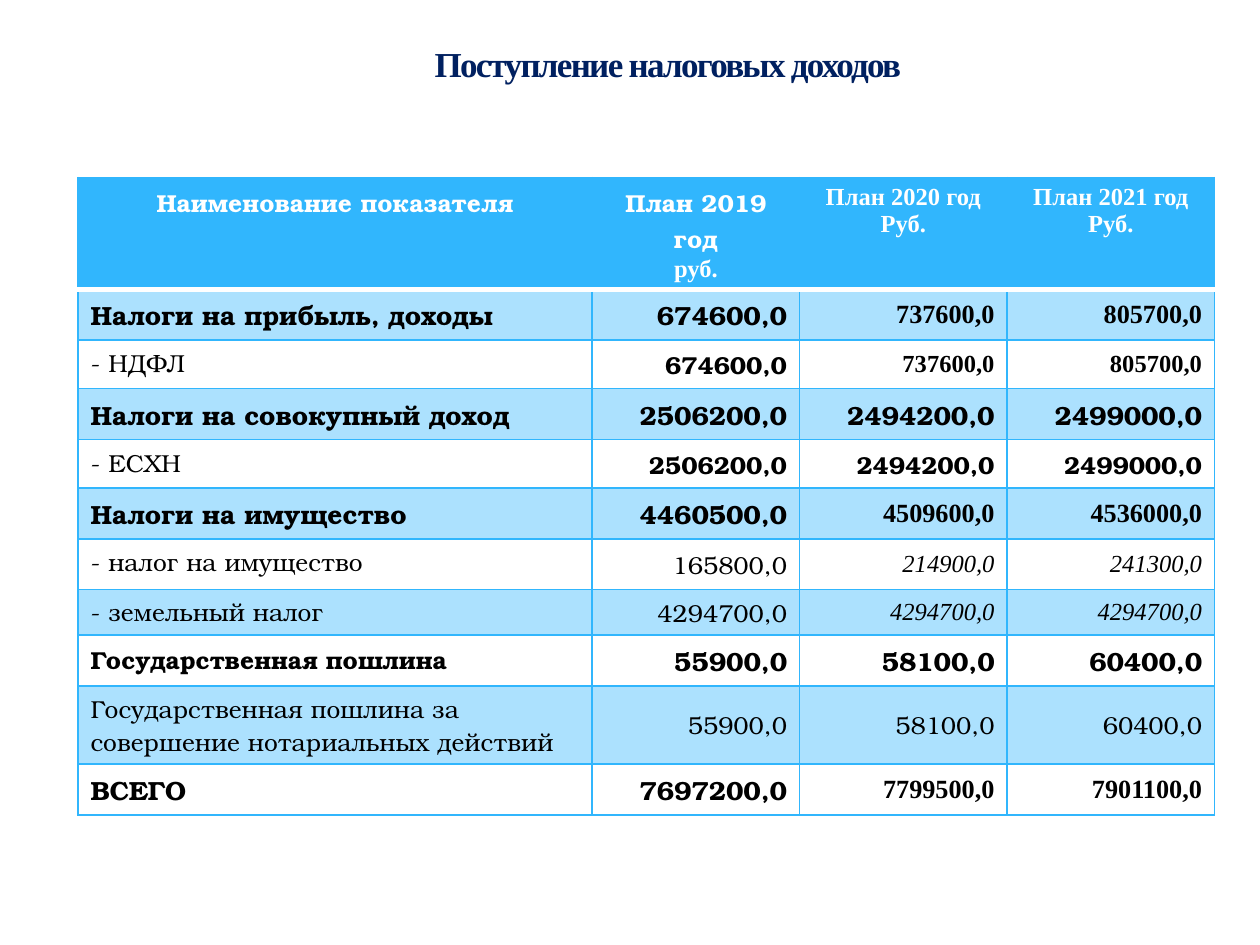
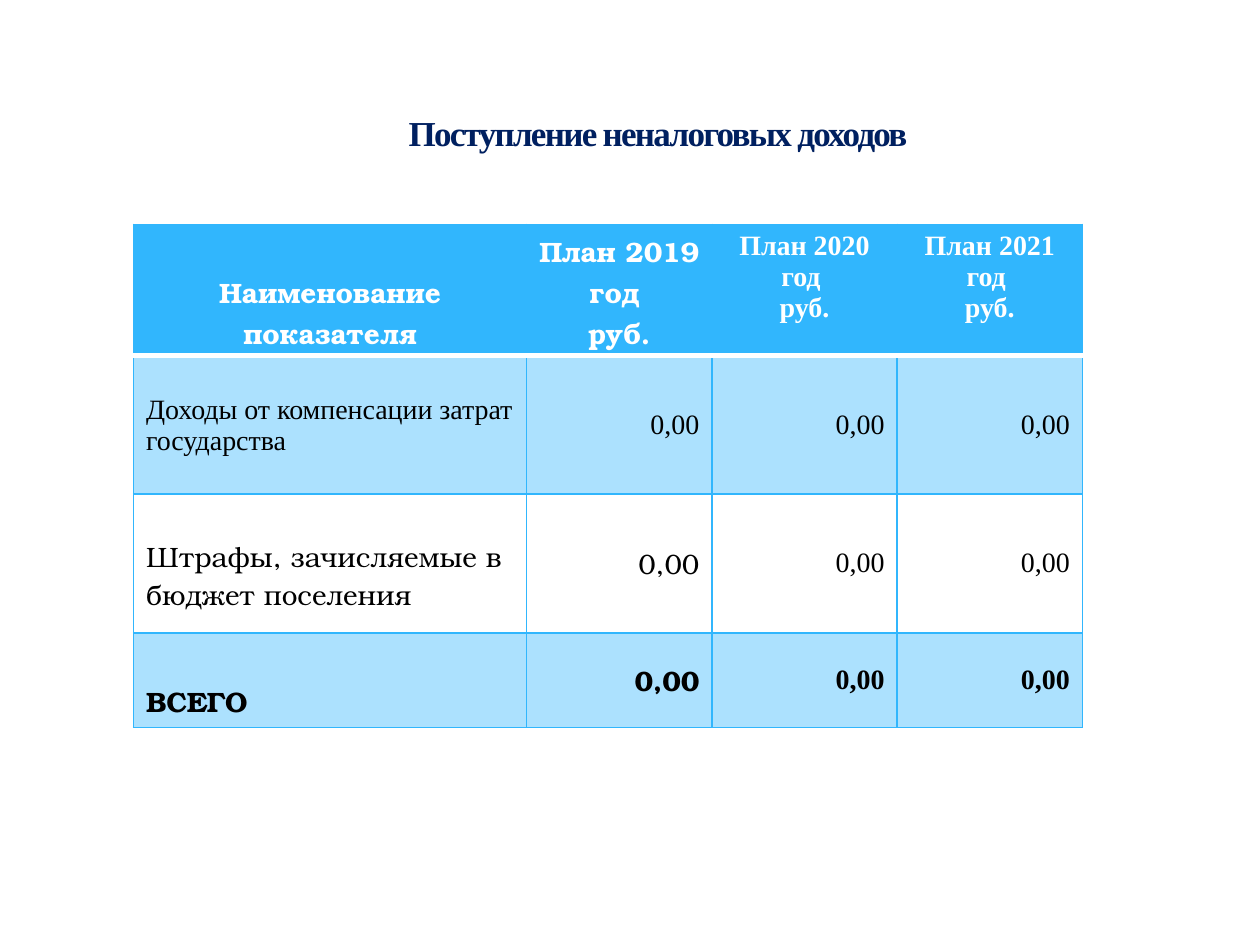
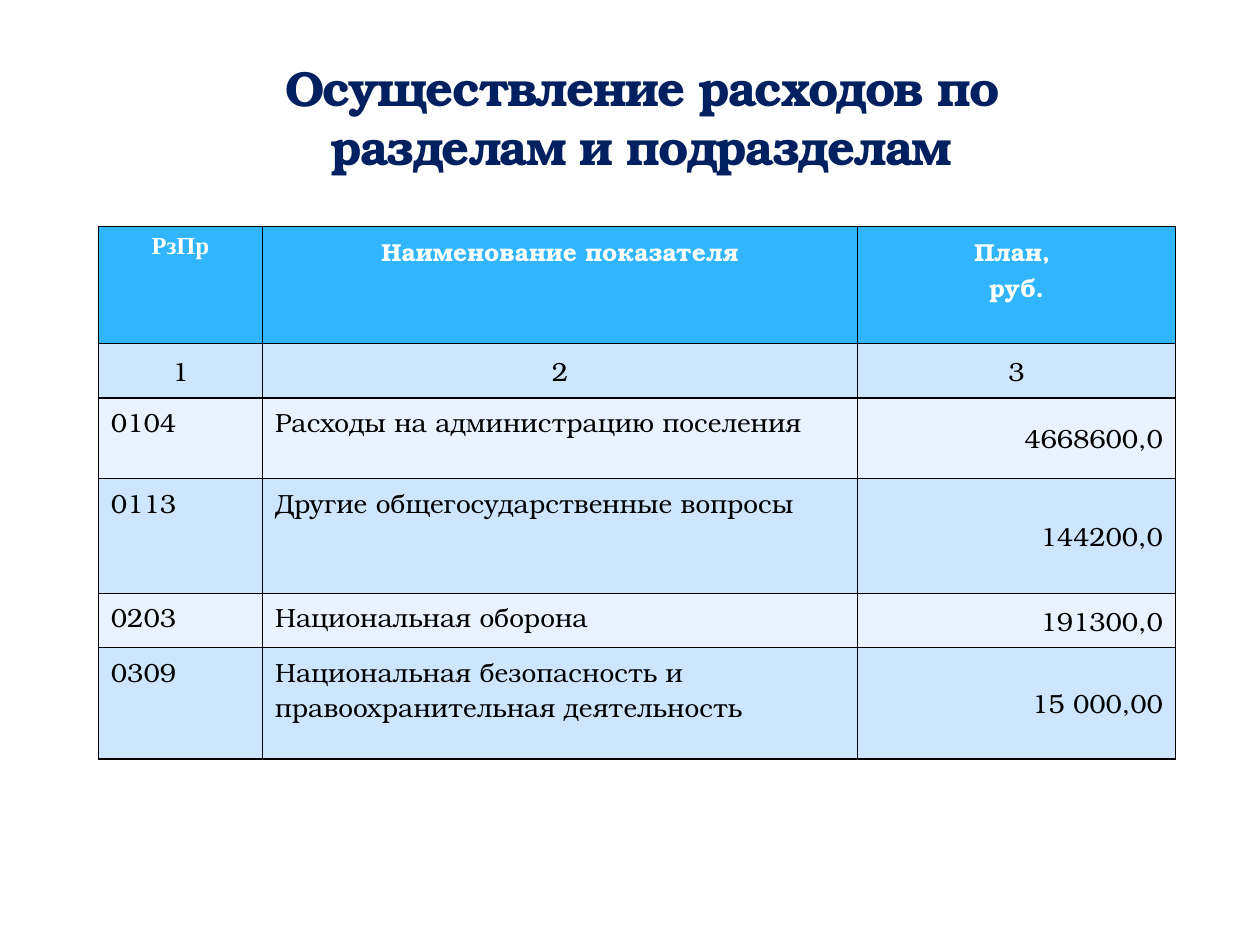
from dataclasses import dataclass
from itertools import product

from lxml.etree import SubElement
from pptx import Presentation
from pptx.dml.color import RGBColor
from pptx.enum.text import MSO_ANCHOR, PP_ALIGN
from pptx.oxml.ns import qn
from pptx.util import Pt


@dataclass(frozen=True)
class TextStyle:
    font: str
    size: int
    bold: bool = False
    italic: bool = False


@dataclass(frozen=True)
class Theme:
    title_color: str = "002060"
    accent: str = "31B6FD"
    white: str = "FFFFFF"
    black: str = "000000"
    blue_band: str = "CEE5FE"
    pale_band: str = "E8F3FF"
    band_opacity: int = 40
    title: TextStyle = TextStyle("Times New Roman", 20, True)
    large_title: TextStyle = TextStyle("TeX Gyre Bonum", 28, True)
    bonum: TextStyle = TextStyle("TeX Gyre Bonum", 14)
    bonum_bold: TextStyle = TextStyle("TeX Gyre Bonum", 14, True)
    bonum_mid: TextStyle = TextStyle("TeX Gyre Bonum", 15)
    bonum_mid_bold: TextStyle = TextStyle("TeX Gyre Bonum", 15, True)
    bonum_big: TextStyle = TextStyle("TeX Gyre Bonum", 16)
    bonum_big_bold: TextStyle = TextStyle("TeX Gyre Bonum", 16, True)
    times_bold: TextStyle = TextStyle("Times New Roman", 14, True)
    times_italic: TextStyle = TextStyle("Times New Roman", 14, False, True)
    times_mid_bold: TextStyle = TextStyle("Times New Roman", 15, True)
    times_big: TextStyle = TextStyle("Times New Roman", 16)
    times_big_bold: TextStyle = TextStyle("Times New Roman", 16, True)


THEME = Theme()
NO_TABLE_STYLE = "{2D5ABB26-0587-4C30-8999-92F81FD0307C}"


@dataclass(frozen=True)
class Box:
    left: float
    top: float
    width: float
    height: float


@dataclass(frozen=True)
class Entry:
    """Content of one table cell: (text, style) lines and their placing."""
    lines: tuple
    align: PP_ALIGN = PP_ALIGN.LEFT
    anchor: MSO_ANCHOR = MSO_ANCHOR.TOP
    top_margin: float = 3.6


def heading(*lines, style, top_margin=3.6):
    return Entry(tuple((line, style) for line in lines), PP_ALIGN.CENTER,
                 top_margin=top_margin)


def label(text, style, top_margin=3.6):
    return Entry(((text, style),), top_margin=top_margin)


def number(text, style, align=PP_ALIGN.RIGHT):
    return Entry(((text, style),), align, MSO_ANCHOR.MIDDLE)


def plan_row(name, values, first_style, later_style):
    """A label followed by one value in first_style and the rest in later_style."""
    first, *later = values.split()
    return [name, number(first, first_style),
            *(number(value, later_style) for value in later)]


def style_paragraph(para, style, color, align):
    para.alignment = align
    para.font.name = style.font
    para.font.size = Pt(style.size)
    para.font.bold = style.bold
    para.font.italic = style.italic
    para.font.color.rgb = RGBColor.from_string(color)


def add_title(page, box, text, style, anchor=MSO_ANCHOR.MIDDLE):
    shape = page.shapes.add_textbox(Pt(box.left), Pt(box.top),
                                    Pt(box.width), Pt(box.height))
    frame = shape.text_frame
    frame.word_wrap = True
    frame.vertical_anchor = anchor
    para = frame.paragraphs[0]
    span = para.add_run()
    span.text = text
    span.font._element.set("spc", "-100")
    style_paragraph(para, style, THEME.title_color, PP_ALIGN.CENTER)


def set_border(cell, side, color, width):
    line = SubElement(cell._tc.get_or_add_tcPr(), qn(f"a:ln{side}"),
                      w=str(Pt(width)))
    SubElement(SubElement(line, qn("a:solidFill")), qn("a:srgbClr"), val=color)


def set_fill(cell, color, opacity=100):
    if color is None:
        cell.fill.background()
        return
    cell.fill.solid()
    cell.fill.fore_color.rgb = RGBColor.from_string(color)
    if opacity < 100:
        shade = cell._tc.tcPr.find(f"{qn('a:solidFill')}/{qn('a:srgbClr')}")
        SubElement(shade, qn("a:alpha"), val=str(opacity * 1000))


def write_cell(cell, entry, color):
    cell.vertical_anchor = entry.anchor
    cell.margin_top = Pt(entry.top_margin)
    cell.text = "\n".join(text for text, _ in entry.lines)
    for para, (_, style) in zip(cell.text_frame.paragraphs, entry.lines):
        style_paragraph(para, style, color, entry.align)


def add_grid(page, left, top, columns, heights, rows, bands, border, header_rule):
    """Table with a header row, two alternating (color, opacity) bands, and
    (color, width) lines for the grid and under the header."""
    frame = page.shapes.add_table(len(rows), len(columns), Pt(left), Pt(top),
                                  Pt(sum(columns)), Pt(sum(heights)))
    table = frame.table
    table.first_row = table.horz_banding = False
    table._tbl.tblPr.find(qn("a:tableStyleId")).text = NO_TABLE_STYLE
    for column, width in zip(table.columns, columns):
        column.width = Pt(width)
    for row, height in zip(table.rows, heights):
        row.height = Pt(height)
    for r, c in product(range(len(rows)), range(len(columns))):
        cell = table.cell(r, c)
        for side in "LRTB":
            under_header = (r, side) in ((0, "B"), (1, "T"))
            set_border(cell, side, *(header_rule if under_header else border))
        set_fill(cell, *(bands[(r - 1) % 2] if r else (THEME.accent,)))
        write_cell(cell, rows[r][c], THEME.black if r else THEME.white)


def add_plan_grid(page, left, top, columns, heights, rows):
    add_grid(page, left, top, columns, heights, rows,
             bands=((THEME.accent, THEME.band_opacity), (None,)),
             border=(THEME.accent, 1), header_rule=(THEME.white, 3))


def tax_income_page(page):
    t = THEME
    header = [
        heading("Наименование показателя", style=t.bonum_bold),
        Entry((("План 2019 год", t.bonum_bold), ("руб.", t.times_bold)),
              PP_ALIGN.CENTER),
        *(heading(f"План {year} год", "Руб.", style=t.times_bold)
          for year in (2020, 2021)),
    ]
    # Name, values, then the styles of the name, first value and later values
    items = [
        ("Налоги на прибыль, доходы", "674600,0 737600,0 805700,0",
         t.bonum_mid_bold, t.bonum_mid_bold, t.times_mid_bold),
        ("- НДФЛ", "674600,0 737600,0 805700,0",
         t.bonum, t.bonum_bold, t.times_bold),
        ("Налоги на совокупный доход", "2506200,0 2494200,0 2499000,0",
         t.bonum_mid_bold, t.bonum_mid_bold, t.bonum_mid_bold),
        ("- ЕСХН", "2506200,0 2494200,0 2499000,0",
         t.bonum, t.bonum_bold, t.bonum_bold),
        ("Налоги на имущество", "4460500,0 4509600,0 4536000,0",
         t.bonum_mid_bold, t.bonum_mid_bold, t.times_mid_bold),
        ("- налог на имущество", "165800,0 214900,0 241300,0",
         t.bonum, t.bonum, t.times_italic),
        ("- земельный налог", "4294700,0 4294700,0 4294700,0",
         t.bonum, t.bonum, t.times_italic),
        ("Государственная пошлина", "55900,0 58100,0 60400,0",
         t.bonum_bold, t.bonum_mid_bold, t.bonum_mid_bold),
        ("Государственная пошлина за совершение нотариальных действий",
         "55900,0 58100,0 60400,0", t.bonum, t.bonum, t.bonum),
        ("ВСЕГО", "7697200,0 7799500,0 7901100,0",
         t.bonum_mid_bold, t.bonum_mid_bold, t.times_mid_bold),
    ]
    rows = [header] + [plan_row(label(name, name_style), values, first, later)
                       for name, values, name_style, first, later in items]
    add_plan_grid(page, 44.6, 101.5, [293.8] + [118.6] * 3,
                  [39.6, 28.8, 26, 27.4, 23.8, 24.5, 28.8, 26, 28.8, 39.6, 28.8],
                  rows)
    add_title(page, Box(118, 16.6, 527, 39.6), "Поступление налоговых доходов",
              t.title)


def other_income_page(page):
    t = THEME
    header = [heading("Наименование показателя", style=t.bonum_big_bold,
                      top_margin=27)]
    header += [heading(f"План {year} год ", "руб.", style=style)
               for year, style in ((2019, t.bonum_big_bold),
                                   (2020, t.times_big_bold),
                                   (2021, t.times_big_bold))]
    zeros = "0,00 0,00 0,00"
    rows = [
        header,
        plan_row(label("Доходы от компенсации затрат государства", t.times_big, 22),
                 zeros, t.times_big, t.times_big),
        plan_row(label("Штрафы, зачисляемые в бюджет поселения", t.bonum_big, 25),
                 zeros, t.bonum_big, t.times_big),
        plan_row(label("ВСЕГО", t.bonum_big_bold, 27),
                 zeros, t.bonum_big_bold, t.times_big_bold),
    ]
    add_plan_grid(page, 76.3, 128.2, [224.6] + [105.9] * 3,
                  [75, 79.2, 79.2, 54], rows)
    add_title(page, Box(99.4, 49, 553, 53.3), "Поступление неналоговых доходов",
              t.title)


def spending_page(page):
    t = THEME
    items = [
        ("0104", "Расходы на администрацию поселения", "4668600,0"),
        ("0113", "Другие общегосударственные вопросы", "144200,0"),
        ("0203", "Национальная оборона", "191300,0"),
        ("0309", "Национальная безопасность и правоохранительная деятельность",
         "15 000,00"),
    ]
    rows = [
        [heading("РзПр", style=t.times_bold),
         heading("Наименование показателя", style=t.bonum_bold),
         heading("План, ", "руб.", style=t.bonum_bold)],
        [number(text, t.bonum_mid, PP_ALIGN.CENTER) for text in "123"],
    ]
    rows += [[label(code, t.bonum_mid), label(name, t.bonum_mid),
              number(amount, t.bonum_mid)] for code, name, amount in items]
    line = (t.black, 1)
    add_grid(page, 56.2, 129.4, [93.8, 340, 181.7], [67, 31, 46.2, 65.6, 31, 63.6],
             rows, bands=((t.blue_band,), (t.pale_band,)),
             border=line, header_rule=line)
    add_title(page, Box(90, 67.7, 553, 36),
              "Осуществление расходов по разделам и подразделам",
              t.large_title, MSO_ANCHOR.BOTTOM)


def main():
    deck = Presentation()
    deck.slide_width, deck.slide_height = Pt(720), Pt(540)
    for build_page in (tax_income_page, other_income_page, spending_page):
        build_page(deck.slides.add_slide(deck.slide_layouts[6]))
    deck.save("out.pptx")


if __name__ == "__main__":
    main()
